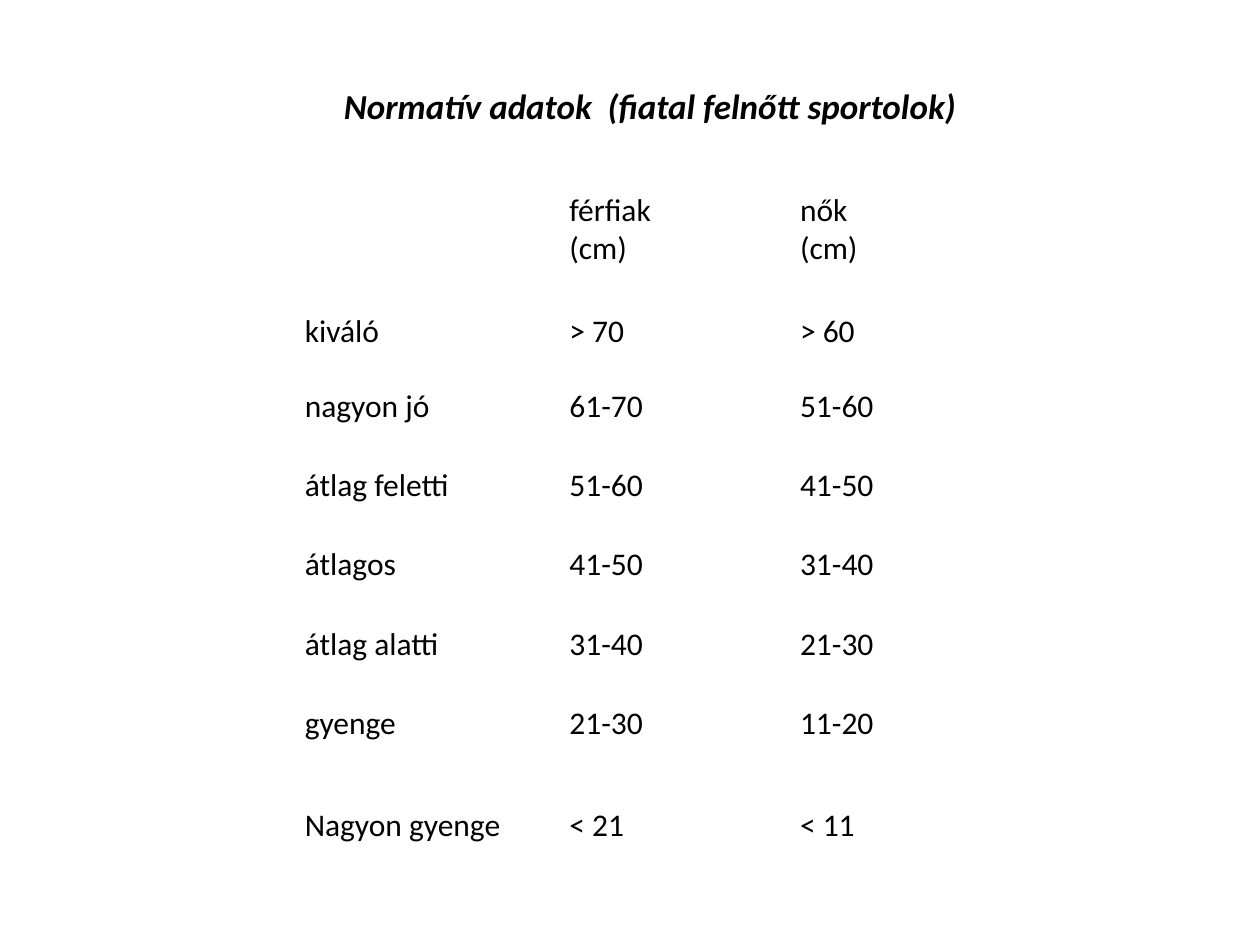
"""Builds a slide with a table of normative jump data for young adult athletes."""
import pptx
import pptx.dml.color
import pptx.enum.text
import pptx.util

Pt = pptx.util.Pt
Anchor = pptx.enum.text.MSO_ANCHOR
theme = {
    "font": "Calibri",
    "ink": pptx.dml.color.RGBColor(0, 0, 0),
    "title": Pt(20),
    "body": Pt(18),
}


def style(para, size, strong=False):
    for run in para.runs:
        font = run.font
        font.name = theme["font"]
        font.size = size
        font.bold = strong
        font.italic = strong
        font.color.rgb = theme["ink"]


deck = pptx.Presentation()
deck.slide_width, deck.slide_height = Pt(720), Pt(540)
slide = deck.slides.add_slide(deck.slide_layouts[5])

title = slide.shapes.title
title.left, title.top, title.width, title.height = Pt(129.6), Pt(44.6), Pt(483.8), Pt(31.7)
frame = title.text_frame
frame.word_wrap = True
frame.auto_size = pptx.enum.text.MSO_AUTO_SIZE.NONE
frame.vertical_anchor = Anchor.MIDDLE
para = frame.paragraphs[0]
para.text = "Normatív adatok  (fiatal felnőtt sportolok)"
para.alignment = pptx.enum.text.PP_ALIGN.CENTER
style(para, theme["title"], True)

rows = [
    ("", "férfiak \v(cm)", "nők \v(cm)"),
    ("kiváló", "> 70", "> 60"),
    ("nagyon jó", "61-70", "51-60"),
    ("átlag feletti", "51-60", "41-50"),
    ("átlagos", "41-50", "31-40"),
    ("átlag alatti", "31-40", "21-30"),
    ("gyenge", "21-30", "11-20"),
    ("Nagyon gyenge", "< 21", "< 11"),
]
widths = [151.2, 131.8, 125.3]
heights = [74.2, 42.5, 42.5, 48.2, 42.5, 48.2, 42.5, 74.2]

grid = slide.shapes.add_table(
    len(rows), len(widths), Pt(167), Pt(94.3), Pt(sum(widths)), Pt(sum(heights))
).table
grid.first_row = False
grid.horz_banding = False
for col, width in zip(grid.columns, widths):
    col.width = Pt(width)
for line, height, texts in zip(grid.rows, heights, rows):
    line.height = Pt(height)
    for cell, text in zip(line.cells, texts):
        cell.fill.background()
        cell.vertical_anchor = Anchor.MIDDLE
        if text:
            para = cell.text_frame.paragraphs[0]
            para.text = text
            style(para, theme["body"])

deck.save("out.pptx")
